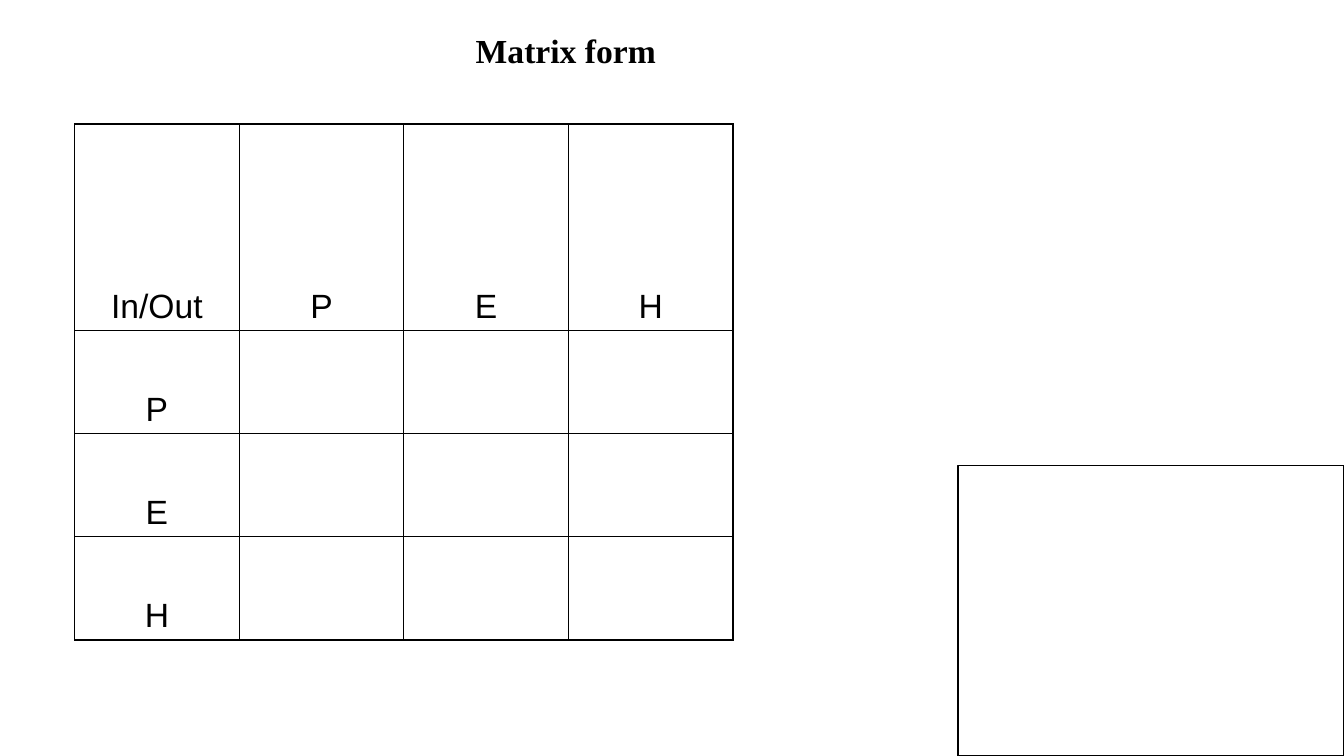
from pptx import Presentation, util as u
from pptx.dml import color
from pptx.enum import shapes, text
from pptx.oxml import parse_xml
from pptx.oxml.ns import nsdecls

BLACK = "000000"
LABELS = ["P", "E", "H"]


def rgb(value):
    return color.RGBColor.from_string(value)


def apply_format(target, values):
    for name, value in values.items():
        setattr(target, name, value)


def write_text(paragraph, content, font_name, bold=False):
    run = paragraph.add_run()
    run.text = content
    apply_format(run.font, {"name": font_name, "size": u.Pt(24), "bold": bold})
    run.font.color.rgb = rgb(BLACK)


def add_title(slide, box):
    shape = slide.shapes.add_textbox(*map(u.Inches, box))
    apply_format(shape.text_frame, {
        "word_wrap": True,
        "vertical_anchor": text.MSO_ANCHOR.MIDDLE,
        "auto_size": text.MSO_AUTO_SIZE.SHAPE_TO_FIT_TEXT,
    })
    write_text(shape.text_frame.paragraphs[0], "Matrix form", "Times New Roman", True)


def add_borders(cell):
    properties = cell._tc.get_or_add_tcPr()
    for position, side in enumerate(["lnL", "lnR", "lnT", "lnB"]):
        properties.insert(position, parse_xml(
            f'<a:{side} {nsdecls("a")} w="{u.Pt(1)}"><a:solidFill>'
            f'<a:srgbClr val="{BLACK}"/></a:solidFill></a:{side}>'
        ))


def add_matrix(slide, box):
    size = len(LABELS) + 1
    left, top, width, height = box
    table = slide.shapes.add_table(size, size, *map(u.Inches, box)).table
    apply_format(table, {"first_row": False, "horz_banding": False})
    for index in range(size):
        table.columns[index].width = u.Inches(width / size)
        share = 2 if index == 0 else 1
        table.rows[index].height = u.Inches(height * share / (size + 1))

    headings = ["In/Out"] + LABELS
    for row in range(size):
        for column in range(size):
            cell = table.cell(row, column)
            cell.fill.background()
            add_borders(cell)
            if row == 0 or column == 0:
                cell.vertical_anchor = text.MSO_ANCHOR.BOTTOM
                paragraph = cell.text_frame.paragraphs[0]
                apply_format(paragraph, {
                    "alignment": text.PP_ALIGN.CENTER,
                    "line_spacing": u.Pt(25.6),
                })
                write_text(paragraph, headings[row + column], "Arial")


def add_frame(slide, box):
    shape = slide.shapes.add_shape(shapes.MSO_SHAPE.RECTANGLE, *map(u.Inches, box))
    shape.shadow.inherit = False
    shape.fill.background()
    shape.line.color.rgb = rgb(BLACK)
    shape.line.width = u.Pt(1)


def main():
    presentation = Presentation()
    apply_format(presentation, {
        "slide_width": u.Inches(13.33),
        "slide_height": u.Inches(7.5),
    })
    slide = presentation.slides.add_slide(presentation.slide_layouts[6])
    add_title(slide, (4.62, 0.24, 7.05, 0.51))
    add_matrix(slide, (0.74, 1.23, 6.53, 5.12))
    add_frame(slide, (9.5, 4.62, 3.83, 2.88))
    presentation.save("out.pptx")


if __name__ == "__main__":
    main()
